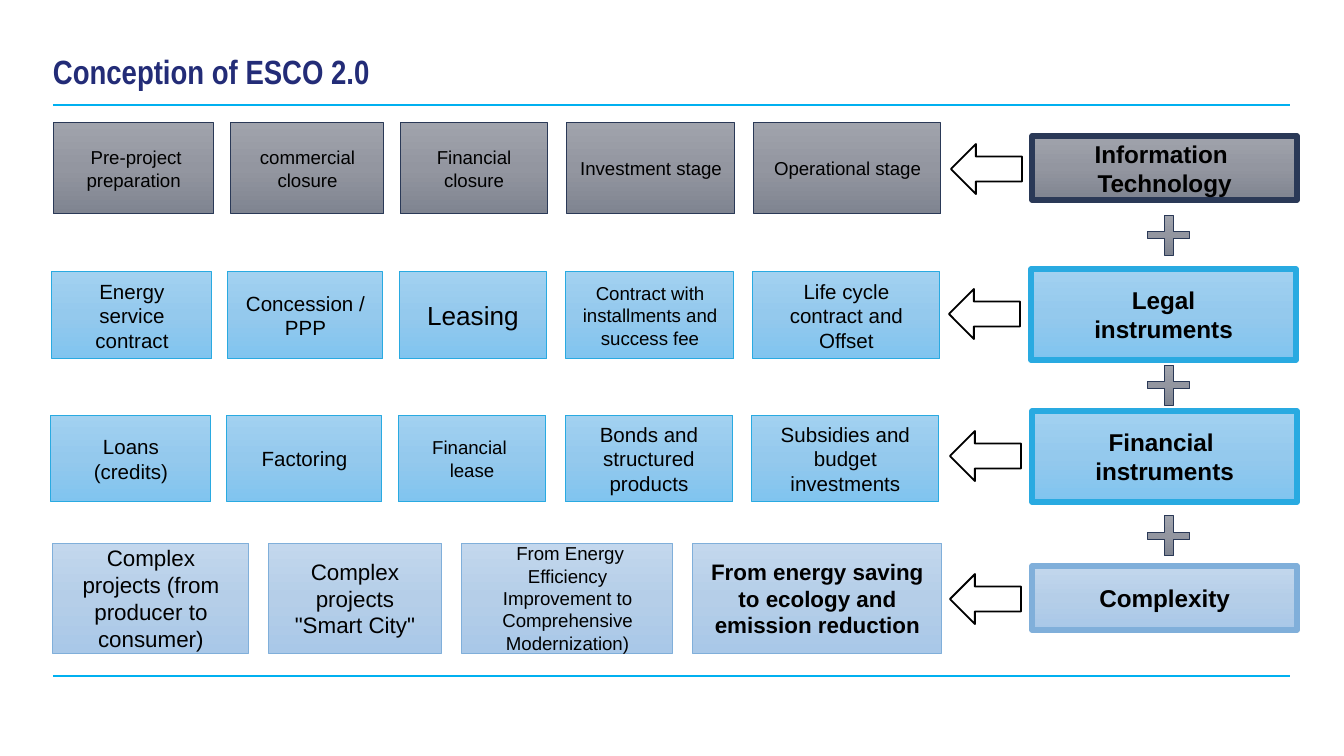
from copy import deepcopy

from lxml import etree
from pptx import Presentation
from pptx.dml.color import RGBColor
from pptx.enum import shapes, text
from pptx.oxml import ns
from pptx.util import Pt

PX = 6804  # EMU per px
THEME = {
    "font": "Arial", "title_font": "Arial Narrow",
    "title_pt": 18, "category_pt": 13, "thin": 0.5, "thick": 3,
    "title": "232C77", "rule": "00B0F0", "ink": "000000", "paper": "FFFFFF",
    # gradient from top to bottom, then outline
    "grey": (("A0A3AC", "9396A0", "7F8490"), "2A3957"),
    "blue": (("A2D1F0", "94C9ED", "80C4EF"), "29AAE1"),
    "pale": (("C3D7ED", "B5CEE8", "A9C8E8"), "80AFDA"),
}
rgb = RGBColor.from_string
kinds = shapes.MSO_SHAPE

prs = Presentation()
prs.slide_width, prs.slide_height = 1344 * PX, 756 * PX
s = prs.slides.add_slide(prs.slide_layouts[6])


def add_shape(kind, x, y, w, h, style, line_pt):
    """Preset shape filled with a three-stop vertical gradient."""
    colors, outline = THEME[style]
    sp = s.shapes.add_shape(kind, x * PX, y * PX, w * PX, h * PX)
    sp.shadow.inherit = False
    sp.fill.gradient()
    sp.fill.gradient_angle = 270
    stops = sp._element.spPr.find(".//" + ns.qn("a:gsLst"))
    stops.insert(1, deepcopy(stops[0]))
    for stop, color, position in zip(sp.fill.gradient_stops, colors, (0, 0.5, 1)):
        stop.color.rgb = rgb(color)
        stop.position = position
    sp.line.color.rgb = rgb(outline)
    sp.line.width = Pt(line_pt)
    return sp


def write(sp, words, size, bold=False, wrap=True):
    """Centred black text in a box."""
    tf = sp.text_frame
    tf.word_wrap = wrap
    tf.vertical_anchor = text.MSO_ANCHOR.MIDDLE
    p = tf.paragraphs[0]
    p.text = words
    p.alignment = text.PP_ALIGN.CENTER
    p.font.name, p.font.size, p.font.bold = THEME["font"], Pt(size), bold
    p.font.color.rgb = rgb(THEME["ink"])


# Rules above and below the content
for y in (105, 676):
    rule = s.shapes.add_connector(shapes.MSO_CONNECTOR.STRAIGHT, 53 * PX, y * PX, 1290 * PX, y * PX)
    rule.line.color.rgb = rgb(THEME["rule"])
    rule.line.width = Pt(1.5)
    etree.SubElement(rule._element.spPr, ns.qn("a:effectLst"))

# Title
tf = s.shapes.add_textbox(53 * PX, 28 * PX, 958 * PX, 70 * PX).text_frame
tf.word_wrap = True
tf.margin_left = 0
tf.vertical_anchor = text.MSO_ANCHOR.BOTTOM
p = tf.paragraphs[0]
p.text = "Conception of ESCO 2.0"
p.line_spacing = 0.9
p.font.name, p.font.size, p.font.bold = THEME["title_font"], Pt(THEME["title_pt"]), True
p.font.color.rgb = rgb(THEME["title"])

# Rows of boxes: style, top, height, columns (left, width), labels (text, size)
stage_cols = [(53, 161), (231, 153), (400, 148), (567, 168), (754, 187)]
legal_cols = [(52, 160), (228, 155), (399, 148), (566, 168), (753, 187)]
finance_cols = [(x - 1, w) for x, w in legal_cols]
complex_cols = [(53, 196), (268, 174), (462, 211), (693, 249)]
rows = [
    ("grey", 123, 91, stage_cols, [
        (" Pre-project preparation", 10), ("commercial closure", 10),
        ("Financial closure", 10), ("Investment stage", 10), ("Operational stage", 10)]),
    ("blue", 272, 87, legal_cols, [
        ("Energy service contract", 11), ("Concession / PPP", 11), ("Leasing", 14),
        ("Contract with installments and success fee", 10),
        ("Life cycle contract and Offset", 11)]),
    ("blue", 415, 87, finance_cols, [
        ("Loans (credits)", 11), ("Factoring", 11), ("Financial \nlease", 10),
        ("Bonds and structured products", 11),
        ("Subsidies and budget investments", 11)]),
    ("pale", 543, 110, complex_cols, [
        ("Complex projects (from producer to consumer)", 12),
        ('Complex projects "Smart City"', 12),
        (" From Energy Efficiency Improvement to Comprehensive Modernization)", 10),
        ("From energy saving to ecology and emission reduction", 12)]),
]
for style, top, height, cols, labels in rows:
    for (x, w), (words, size) in zip(cols, labels):
        sp = add_shape(kinds.RECTANGLE, x, top, w, height, style, THEME["thin"])
        write(sp, words, size, bold=words.startswith("From energy saving"))

# Categories on the right, each with an arrow to its row
categories = [
    ("Information \nTechnology", "grey", 1032, 136, 64, 951, 144),
    ("Legal\ninstruments", "blue", 1031, 269, 91, 949, 289),
    ("Financial \ninstruments", "blue", 1032, 411, 91, 950, 431),
    ("Complexity", "pale", 1032, 566, 64, 950, 574),
]
for words, style, x, y, h, arrow_x, arrow_y in categories:
    sp = add_shape(kinds.RECTANGLE, x, y, 265, h, style, THEME["thick"])
    write(sp, words, THEME["category_pt"], bold=True, wrap=False)
    arrow = s.shapes.add_shape(kinds.LEFT_ARROW, arrow_x * PX, arrow_y * PX, 71 * PX, 50 * PX)
    arrow.shadow.inherit = False
    arrow.fill.solid()
    arrow.fill.fore_color.rgb = rgb(THEME["paper"])
    arrow.line.color.rgb = rgb(THEME["ink"])
    arrow.line.width = Pt(1)

# Plus signs between the categories
for y in (215, 365, 516):
    plus = add_shape(kinds.CROSS, 1148, y, 42, 40, "grey", THEME["thin"])
    plus.adjustments[0] = 0.42

prs.save("out.pptx")
